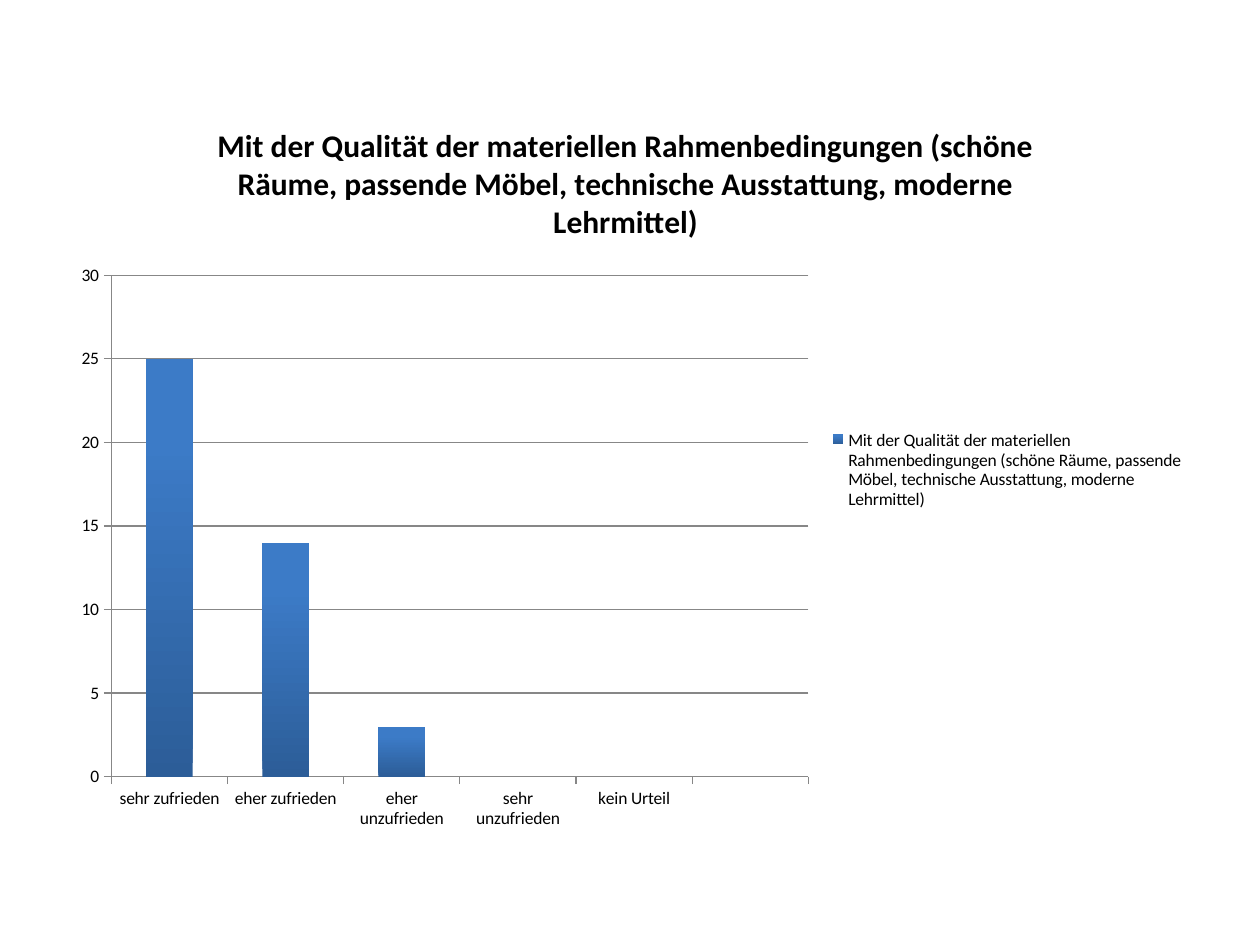
from pptx import Presentation
from pptx import util as u
from pptx.chart.data import CategoryChartData
from pptx.dml.color import RGBColor
from pptx.enum import chart as kinds
from pptx.oxml import parse_xml
from pptx.oxml.ns import nsdecls

QUESTION = ("Mit der Qualität der materiellen Rahmenbedingungen (schöne Räume, "
            "passende Möbel, technische Ausstattung, moderne Lehrmittel)")
ANSWERS = [
    ("sehr zufrieden", 25),
    ("eher zufrieden", 14),
    ("eher unzufrieden", 3),
    ("sehr unzufrieden", 0),
    ("kein Urteil", 0),
    ("", None),
]
COLORS = {"text": "000000", "line": "878787", "bar_low": "2C5D98", "bar_high": "3C7BC7"}
CHART_AREA = (0.43, 0.76, 9.07, 5.94)
PLOT_AREA = {"x": 0.05, "y": 0.24, "w": 0.61, "h": 0.67}
BASE_FONT = {"name": "Calibri", "size": u.Pt(10), "bold": False}
TITLE_FONT = {"name": "Calibri", "size": u.Pt(18), "bold": True}


def color(name):
    return RGBColor.from_string(COLORS[name])


def assign(target, values):
    for name, value in values.items():
        setattr(target, name, value)


def style_font(font, values):
    assign(font, values)
    font.color.rgb = color("text")


def style_line(line):
    line.color.rgb = color("line")
    line.width = u.Pt(0.75)


def place_plot(chart):
    sizes = "".join(f'<c:{key} val="{value}"/>' for key, value in PLOT_AREA.items())
    layout = parse_xml(
        f'<c:layout {nsdecls("c")}><c:manualLayout><c:layoutTarget val="inner"/>'
        f'<c:xMode val="edge"/><c:yMode val="edge"/>{sizes}</c:manualLayout></c:layout>')
    plot_area = chart.plots[0]._element.getparent()
    for old in plot_area.findall(layout.tag):
        plot_area.remove(old)
    plot_area.insert(0, layout)


def add_answer_chart(page):
    data = CategoryChartData()
    data.categories = [label for label, _ in ANSWERS]
    data.add_series(QUESTION, [count for _, count in ANSWERS])
    chart = page.shapes.add_chart(
        kinds.XL_CHART_TYPE.COLUMN_CLUSTERED, *map(u.Inches, CHART_AREA), data).chart
    style_font(chart.font, BASE_FONT)

    chart.has_title = True
    title = chart.chart_title
    title.include_in_layout = False
    title.text_frame.text = QUESTION
    style_font(title.text_frame.paragraphs[0].runs[0].font, TITLE_FONT)

    chart.has_legend = True
    assign(chart.legend, {"position": kinds.XL_LEGEND_POSITION.RIGHT,
                          "include_in_layout": False})

    for axis in (chart.category_axis, chart.value_axis):
        axis.major_tick_mark = kinds.XL_TICK_MARK.OUTSIDE
        style_line(axis.format.line)
    assign(chart.value_axis, {"minimum_scale": 0, "maximum_scale": 30, "major_unit": 5,
                              "has_major_gridlines": True})
    style_line(chart.value_axis.major_gridlines.format.line)

    plot = chart.plots[0]
    assign(plot, {"gap_width": 150, "vary_by_categories": False})
    fill = plot.series[0].format.fill
    fill.gradient()
    fill.gradient_angle = 90
    for stop, name, position in zip(fill.gradient_stops, ("bar_low", "bar_high"), (0, 0.8)):
        stop.color.rgb = color(name)
        stop.position = position
    place_plot(chart)


def main():
    deck = Presentation()
    assign(deck, {"slide_width": u.Inches(10), "slide_height": u.Inches(7.5)})
    page = deck.slides.add_slide(deck.slide_layouts[6])
    add_answer_chart(page)
    deck.save("out.pptx")


if __name__ == "__main__":
    main()
